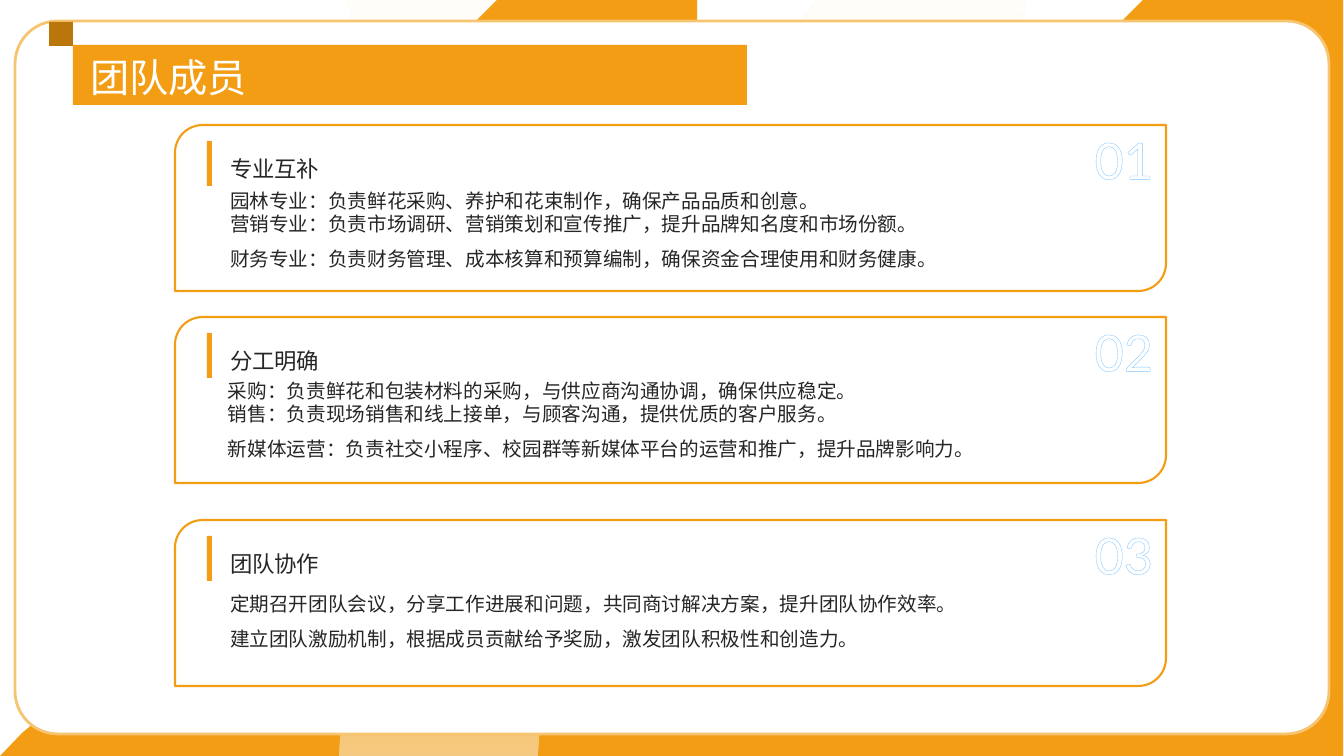
from math import cos, radians, sin

from lxml.etree import SubElement
from pptx import Presentation
from pptx.dml.color import RGBColor as Color
from pptx.enum.shapes import MSO_SHAPE as Shape
from pptx.enum.text import MSO_ANCHOR as Anchor, PP_ALIGN as Align
from pptx.oxml import parse_xml
from pptx.oxml.ns import nsdecls, qn
from pptx.util import Emu, Pt

EMU_PER_PX = 914400 / 100.8
WIDTH, HEIGHT = 1344, 756
CHINESE, LATIN = "Noto Sans CJK SC", "Lato"

COLORS = {
    "orange": "F29D13",
    "brown": "B9760A",
    "frame": "F7C471",
    "cream": "FCEBD0",
    "mist": "FFFDFA",
    "tan": "F5C97F",
    "white": "FFFFFF",
    "ink": "262626",
    "sky": "7FC5FF",
}

# Each card: top, body left, body top, number, heading, body lines
CARDS = [
    (125, 230, 186, "01", "专业互补", [
        "园林专业：负责鲜花采购、养护和花束制作，确保产品品质和创意。",
        "营销专业：负责市场调研、营销策划和宣传推广，提升品牌知名度和市场份额。",
        "财务专业：负责财务管理、成本核算和预算编制，确保资金合理使用和财务健康。",
    ]),
    (317, 228, 376, "02", "分工明确", [
        "采购：负责鲜花和包装材料的采购，与供应商沟通协调，确保供应稳定。",
        "销售：负责现场销售和线上接单，与顾客沟通，提供优质的客户服务。",
        "新媒体运营：负责社交小程序、校园群等新媒体平台的运营和推广，提升品牌影响力。",
    ]),
    (520, 230, 589, "03", "团队协作", [
        "定期召开团队会议，分享工作进展和问题，共同商讨解决方案，提升团队协作效率。",
        "建立团队激励机制，根据成员贡献给予奖励，激发团队积极性和创造力。",
    ]),
]


def px(length):
    return Emu(round(length * EMU_PER_PX))


def color(name):
    return Color.from_string(COLORS[name])


def set_all(target, values):
    for name, value in values.items():
        setattr(target, name, value)


def paint(shape, fill, line=None, line_width=0):
    """Fill with one colour, or with a (bottom, top) gradient."""
    shape.shadow.inherit = False
    if isinstance(fill, tuple):
        shape.fill.gradient()
        shape.fill.gradient_angle = 90
        for stop, name in zip(shape.fill.gradient_stops, fill):
            stop.color.rgb = color(name)
    else:
        shape.fill.solid()
        shape.fill.fore_color.rgb = color(fill)
    if line:
        shape.line.color.rgb = color(line)
        shape.line.width = Pt(line_width)
    else:
        shape.line.fill.background()


def add_block(slide, kind, box, fill, line=None, line_width=0):
    shape = slide.shapes.add_shape(kind, *map(px, box))
    paint(shape, fill, line, line_width)
    return shape


def arc(center, radius, start, end, steps=24):
    angles = [radians(start + (end - start) * i / steps) for i in range(steps + 1)]
    return [(center[0] + radius * cos(a), center[1] + radius * sin(a)) for a in angles]


def add_outline(slide, points, fill):
    builder = slide.shapes.build_freeform(*points[0], scale=EMU_PER_PX)
    builder.add_line_segments(points[1:], close=True)
    paint(builder.convert_to_shape(), fill)


def add_text(slide, box, lines, size, ink="ink", font=CHINESE, spacings=(None,),
             align=Align.LEFT, anchor=Anchor.TOP, top_inset=0):
    frame = slide.shapes.add_textbox(*map(px, box)).text_frame
    set_all(frame, {"word_wrap": True, "vertical_anchor": anchor, "margin_left": 0,
                    "margin_right": 0, "margin_top": px(top_inset), "margin_bottom": 0})
    for index, (line, spacing) in enumerate(zip(lines, spacings)):
        paragraph = frame.paragraphs[0] if index == 0 else frame.add_paragraph()
        set_all(paragraph, {"alignment": align, "line_spacing": spacing})
        run = paragraph.add_run()
        run.text = line
        set_all(run.font, {"size": Pt(size), "name": font})
        run.font.color.rgb = color(ink)
        SubElement(run.font._element, qn("a:ea"), typeface=font)
    return frame


def outline_letters(frame, name):
    properties = frame.paragraphs[0].runs[0].font._element
    properties.insert(0, parse_xml(
        f'<a:ln {nsdecls("a")} w="{Pt(1)}"><a:solidFill>'
        f'<a:srgbClr val="{COLORS[name]}"/></a:solidFill></a:ln>'))


def add_background(slide):
    # Arch hanging from the top edge
    top = (687, -75)
    add_outline(slide, arc(top, 348, 12.5, 167.5) + arc(top, 149, 149.8, 30.2),
                ("cream", "mist"))
    # Left and right pairs of orange sweeps, with an arch between them
    for shift in (0, 646):
        right = shift + 697
        base = arc((shift + 378, 1121), 526, 224, 307)
        add_outline(slide, base + [(right, HEIGHT), (shift, HEIGHT)], "orange")
        side = arc((shift + 862, 378), 526, 226, 134)
        add_outline(slide, side + [(right, HEIGHT), (right, 0)], "orange")
        if shift == 0:
            bottom = (687, HEIGHT)
            add_outline(slide, arc(bottom, 348, 180, 360) + arc(bottom, 149, 360, 180),
                        ("tan", "orange"))
    # White panel
    panel = add_block(slide, Shape.ROUNDED_RECTANGLE, (15, 21, 1314, 713),
                      "white", "frame", 2)
    panel.adjustments[0] = 0.06


def add_card(slide, top, body_left, body_top, number, heading, lines):
    add_block(slide, Shape.ROUND_2_DIAG_RECTANGLE, (175, top, 991, 166),
              "white", "orange", 1.5)
    spacings = [Pt(16.5)] * (len(lines) - 1) + [Pt(25)]
    add_text(slide, (body_left, body_top, 914, 91), lines, 14,
             spacings=spacings, top_inset=3)
    digits = add_text(slide, (1025, top + 4, 128, 82), [number], 36, "white", LATIN,
                      align=Align.RIGHT)
    outline_letters(digits, "sky")
    add_block(slide, Shape.RECTANGLE, (207, top + 16, 5, 45), "orange")
    add_text(slide, (230, top + 16, 820, 41), [heading], 16,
             spacings=[1.3], anchor=Anchor.BOTTOM)


def add_title(slide, title):
    add_block(slide, Shape.RECTANGLE, (49, 22, 24, 24), "brown")
    add_block(slide, Shape.RECTANGLE, (73, 45, 674, 60), "orange")
    add_text(slide, (90, 49, 1179, 51), [title], 28, "white",
             spacings=[1.1], anchor=Anchor.MIDDLE)


def main():
    presentation = Presentation()
    set_all(presentation, {"slide_width": px(WIDTH), "slide_height": px(HEIGHT)})
    slide = presentation.slides.add_slide(presentation.slide_layouts[6])
    add_background(slide)
    for card in CARDS:
        add_card(slide, *card)
    add_title(slide, "团队成员")
    presentation.save("out.pptx")


if __name__ == "__main__":
    main()
